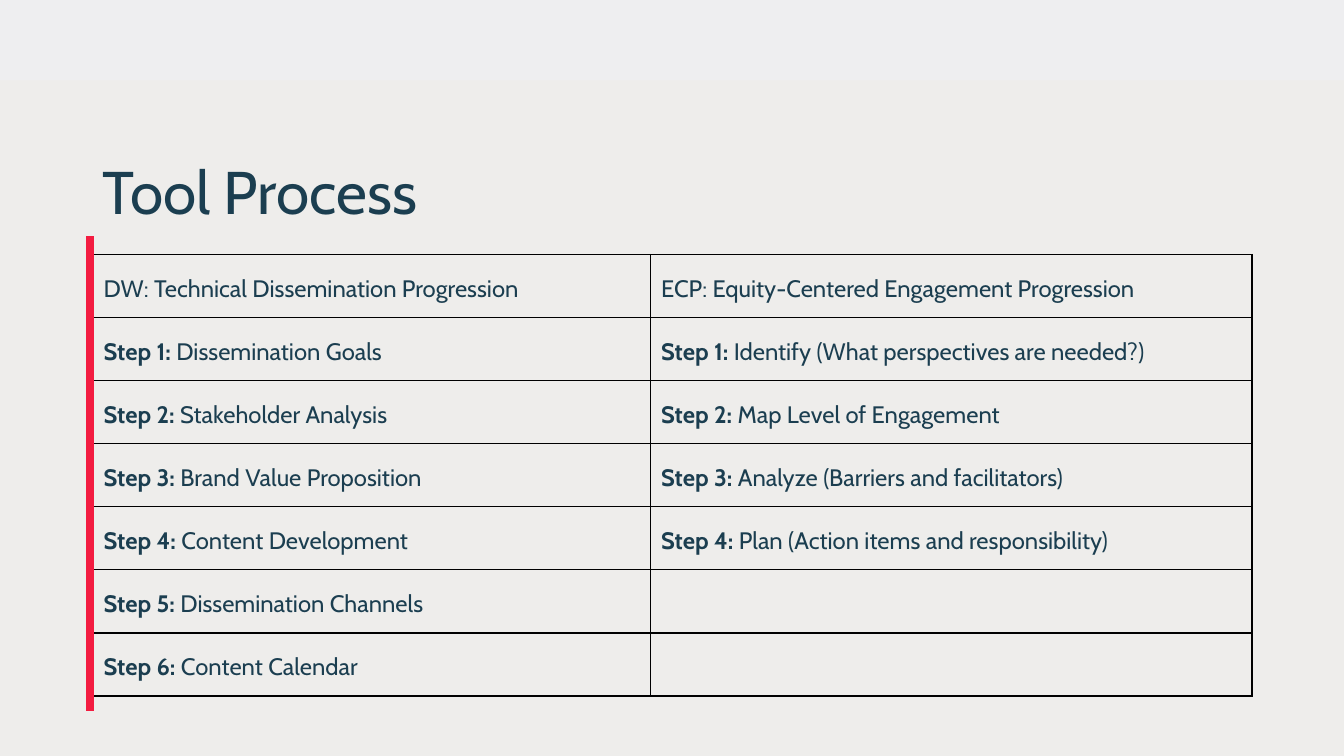
"""Build the Tool Process slide with its table of steps."""
from itertools import zip_longest
from lxml import etree
from pptx import Presentation
from pptx.dml.color import RGBColor
from pptx.enum.shapes import MSO_CONNECTOR, MSO_SHAPE
from pptx.enum.text import MSO_ANCHOR
from pptx.oxml.ns import qn
from pptx.util import Cm, Pt

MIDDLE = MSO_ANCHOR.MIDDLE
RECT = MSO_SHAPE.RECTANGLE
LINE = MSO_CONNECTOR.STRAIGHT

TITLE = "Tool Process"
HEADS = (
    "DW: Technical Dissemination Progression",
    "ECP: Equity-Centered Engagement Progression",
)
GOALS = (
    "Dissemination Goals",
    "Stakeholder Analysis",
    "Brand Value Proposition",
    "Content Development",
    "Dissemination Channels",
    "Content Calendar",
)
EQUITY = (
    "Identify (What perspectives are needed?)",
    "Map Level of Engagement",
    "Analyze (Barriers and facilitators)",
    "Plan (Action items and responsibility)",
)
FONT = "Cabin"
INK, PAPER, BAND, RED, BLACK = "1B3E50", "EEEDEB", "EEEEF0", "F31C40", "000000"
WIDE, HIGH = 33.87, 19.05
LEFT, TOP = 2.34, 6.41
COLS = (14.05, 15.16)
ROW = 1.59
OVER = 0.46


def tint(form, code):
    """Give a fill or line format a solid colour."""
    form.solid()
    form.fore_color.rgb = RGBColor.from_string(code)


def write(frame, text, size=17, lead="", space=1.16):
    """Write one paragraph with an optional bold lead."""
    para = frame.paragraphs[0]
    para.line_spacing = space
    para.font.size = Pt(size)
    for part, bold in ((lead, True), (text, False)):
        if part:
            run = para.add_run()
            run.text = part
            run.font.name = FONT
            run.font.size = Pt(size)
            run.font.bold = bold
            run.font.color.rgb = RGBColor.from_string(INK)


def edge(cell):
    """Draw a thin black border round a cell."""
    props = cell._tc.get_or_add_tcPr()
    for spot, tag in enumerate(("a:lnL", "a:lnR", "a:lnT", "a:lnB")):
        line = etree.Element(qn(tag), w=str(Pt(1)))
        fill = etree.SubElement(line, qn("a:solidFill"))
        etree.SubElement(fill, qn("a:srgbClr"), val=BLACK)
        props.insert(spot, line)


def add_band(slide):
    """Add the pale band along the top."""
    band = slide.shapes.add_shape(RECT, 0, 0, Cm(WIDE), Cm(2.03))
    band.shadow.inherit = False
    tint(band.fill, BAND)
    band.line.fill.background()


def add_title(slide):
    """Add the slide title."""
    box = slide.shapes.add_textbox(Cm(LEFT), Cm(3.91), Cm(sum(COLS)), Cm(2.03))
    frame = box.text_frame
    frame.word_wrap = True
    frame.vertical_anchor = MIDDLE
    write(frame, TITLE, size=43, space=0.9)


def add_steps(slide):
    """Add the table of steps and return its height in cm."""
    pairs = list(zip_longest(GOALS, EQUITY, fillvalue=""))
    rows = [HEADS] + pairs
    tall = ROW * len(rows)
    table = slide.shapes.add_table(
        len(rows), len(COLS), Cm(LEFT), Cm(TOP), Cm(sum(COLS)), Cm(tall)
    ).table
    table.first_row = table.horz_banding = False
    for col, width in zip(table.columns, COLS):
        col.width = Cm(width)
    for num, texts in enumerate(rows):
        table.rows[num].height = Cm(ROW)
        for col, text in enumerate(texts):
            cell = table.cell(num, col)
            cell.fill.background()
            cell.vertical_anchor = MIDDLE
            cell.margin_left = cell.margin_right = Cm(0.27)
            cell.margin_top, cell.margin_bottom = Cm(0.03), 0
            edge(cell)
            if num and text:
                write(cell.text_frame, f" {text}", lead=f"Step {num}:")
            else:
                write(cell.text_frame, text)
    return tall


def add_rule(slide, tall):
    """Add the red rule beside the table."""
    side = Cm(2.27)
    rule = slide.shapes.add_connector(
        LINE, side, Cm(TOP - OVER), side, Cm(TOP + tall + OVER * 0.8)
    )
    tint(rule.line.fill, RED)
    rule.line.width = Pt(6)
    etree.SubElement(rule._element.spPr, qn("a:effectLst"))


def main():
    """Build and save the deck."""
    deck = Presentation()
    deck.slide_width, deck.slide_height = Cm(WIDE), Cm(HIGH)
    slide = deck.slides.add_slide(deck.slide_layouts[6])
    tint(slide.background.fill, PAPER)
    add_band(slide)
    add_title(slide)
    tall = add_steps(slide)
    add_rule(slide, tall)
    deck.save("out.pptx")


if __name__ == "__main__":
    main()
